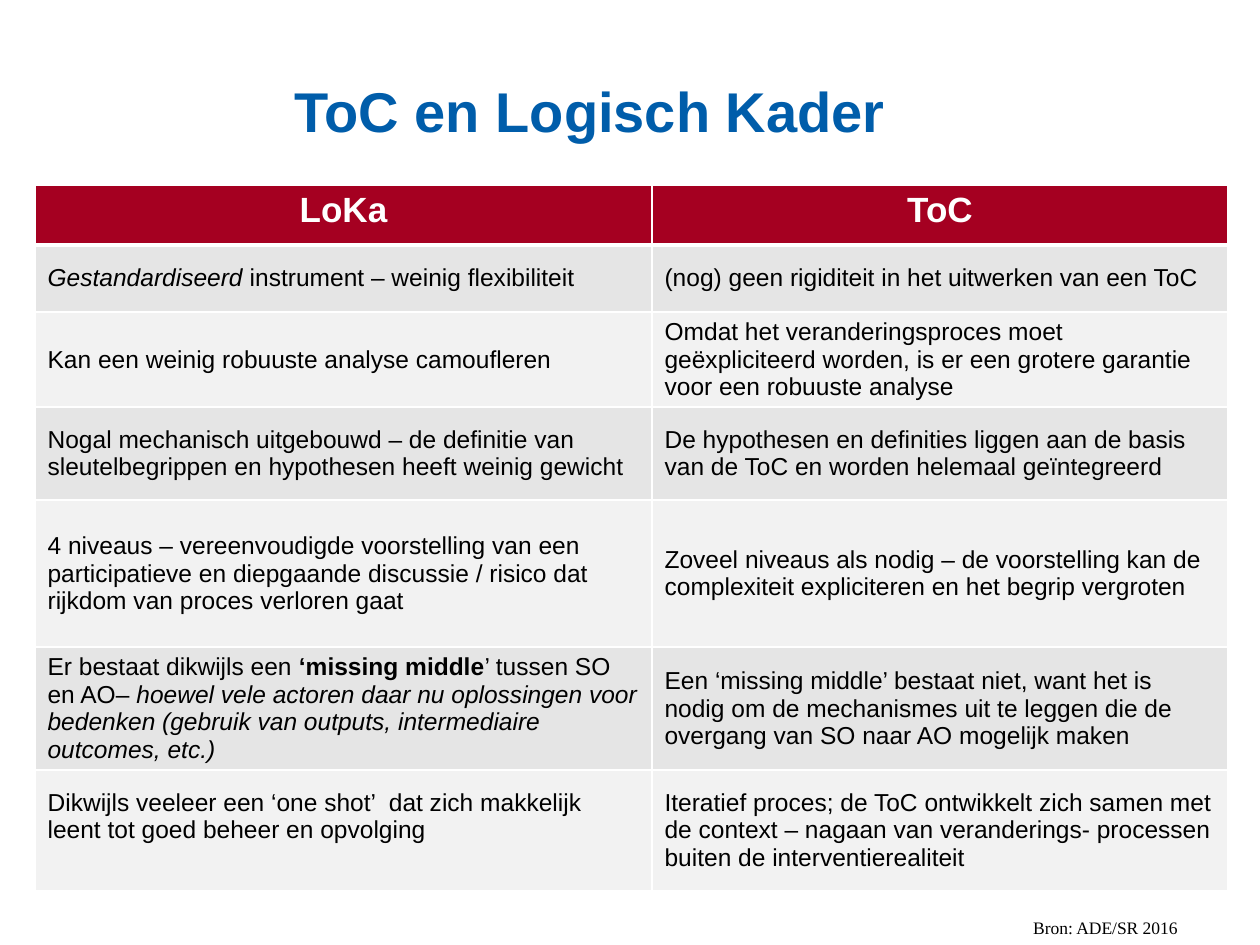
from lxml import etree
from pptx import Presentation, util as u
from pptx.dml.color import RGBColor
from pptx.enum import text as t
from pptx.oxml.ns import qn

TITLE = "ToC en Logisch Kader"
SOURCE = "Bron: ADE/SR 2016"
HEADER = ("LoKa", "ToC")
# Each cell is a list of (text, style) runs: "" plain, "b" bold, "i" italic.
COMPARISON = [
    ([("Gestandardiseerd", "i"), (" instrument – weinig flexibiliteit", "")],
     [("(nog) geen rigiditeit in het uitwerken van een ToC", "")]),
    ([("Kan een weinig robuuste analyse camoufleren", "")],
     [("Omdat het veranderingsproces moet geëxpliciteerd worden, is er een "
       "grotere garantie voor een robuuste analyse", "")]),
    ([("Nogal mechanisch uitgebouwd – de definitie van sleutelbegrippen en "
       "hypothesen heeft weinig gewicht", "")],
     [("De hypothesen en definities liggen aan de basis van de ToC en worden "
       "helemaal geïntegreerd", "")]),
    ([("4 niveaus – vereenvoudigde voorstelling van een participatieve en "
       "diepgaande discussie / risico dat rijkdom van proces verloren gaat", "")],
     [("Zoveel niveaus als nodig – de voorstelling kan de complexiteit "
       "expliciteren en het begrip vergroten", "")]),
    ([("Er bestaat dikwijls een ", ""), ("‘missing middle", "b"),
      ("’ tussen SO en AO– ", ""),
      ("hoewel vele actoren daar nu oplossingen voor bedenken (gebruik van "
       "outputs, intermediaire outcomes, etc.)", "i")],
     [("Een ‘missing middle’ bestaat niet, want het is nodig om de mechanismes "
       "uit te leggen die de overgang van SO naar AO mogelijk maken", "")]),
    ([("Dikwijls veeleer een ‘one shot’  dat zich makkelijk leent tot goed "
       "beheer en opvolging", "")],
     [("Iteratief proces; de ToC ontwikkelt zich samen met de context – nagaan "
       "van veranderings- processen buiten de interventierealiteit", "")]),
]

THEME = {
    "title": ("Arial", 32, "005DAA"),
    "header": ("Arial", 20, "FFFFFF"),
    "body": ("Arial", 14, "000000"),
    "source": ("Times New Roman", 10, "000000"),
    "header_fill": "A50021",
    "bands": ("E5E5E5", "F2F2F2"),
    "rule": "FFFFFF",
}
TITLE_BOX = (282, 55, 945, 95)
TABLE_BOX = (35, 185, 1193, 676)
SOURCE_BOX = (954, 911, 236, 34)
COLUMN_WIDTHS = (617, 576)
ROW_HEIGHTS = (60, 67, 67, 93, 147, 121, 121)
LAST_ROW_LIFT = 34


def px(length):
    return u.Emu(round(length * u.Inches(1) / 126))


def box(lengths):
    return [px(length) for length in lengths]


def add_run(paragraph, words, role, style=""):
    run = paragraph.add_run()
    run.text = words
    name, size, colour = THEME[role]
    run.font.name = name
    run.font.size = u.Pt(size)
    run.font.color.rgb = RGBColor.from_string(colour)
    run.font.bold = "b" in style
    run.font.italic = "i" in style


def set_borders(cell, top, bottom):
    properties = cell._tc.get_or_add_tcPr()
    sides = {"lnL": 1, "lnR": 1, "lnT": top, "lnB": bottom}
    for position, (side, points) in enumerate(sides.items()):
        line = etree.Element(qn("a:" + side), w=str(u.Pt(points)))
        fill = etree.SubElement(line, qn("a:solidFill"))
        etree.SubElement(fill, qn("a:srgbClr"), val=THEME["rule"])
        properties.insert(position, line)


def format_cell(cell, fill, top=1, bottom=1):
    cell.fill.solid()
    cell.fill.fore_color.rgb = RGBColor.from_string(fill)
    set_borders(cell, top, bottom)


def add_title(slide):
    title = slide.shapes.title
    title.left, title.top, title.width, title.height = box(TITLE_BOX)
    frame = title.text_frame
    frame.auto_size = t.MSO_AUTO_SIZE.NONE
    frame.vertical_anchor = t.MSO_ANCHOR.BOTTOM
    frame.paragraphs[0].alignment = t.PP_ALIGN.LEFT
    add_run(frame.paragraphs[0], TITLE, "title", "b")


def add_comparison(slide):
    table = slide.shapes.add_table(
        len(ROW_HEIGHTS), len(COLUMN_WIDTHS), *box(TABLE_BOX)).table
    for column, width in zip(table.columns, COLUMN_WIDTHS):
        column.width = px(width)
    for row, height in zip(table.rows, ROW_HEIGHTS):
        row.height = px(height)

    for column, heading in enumerate(HEADER):
        cell = table.cell(0, column)
        format_cell(cell, THEME["header_fill"], bottom=3)
        paragraph = cell.text_frame.paragraphs[0]
        paragraph.alignment = t.PP_ALIGN.CENTER
        add_run(paragraph, heading, "header", "b")

    for row, statements in enumerate(COMPARISON, start=1):
        for column, runs in enumerate(statements):
            cell = table.cell(row, column)
            format_cell(cell, THEME["bands"][(row - 1) % 2],
                        top=3 if row == 1 else 1)
            cell.vertical_anchor = t.MSO_ANCHOR.MIDDLE
            for words, style in runs:
                add_run(cell.text_frame.paragraphs[0], words, "body", style)
    table.cell(len(COMPARISON), 0).margin_bottom = px(LAST_ROW_LIFT)


def add_source(slide):
    frame = slide.shapes.add_textbox(*box(SOURCE_BOX)).text_frame
    frame.word_wrap = False
    frame.auto_size = t.MSO_AUTO_SIZE.SHAPE_TO_FIT_TEXT
    frame.paragraphs[0].alignment = t.PP_ALIGN.RIGHT
    add_run(frame.paragraphs[0], SOURCE, "source")


def main():
    deck = Presentation()
    deck.slide_width, deck.slide_height = px(1260), px(945)
    slide = deck.slides.add_slide(deck.slide_layouts[5])
    add_title(slide)
    add_comparison(slide)
    add_source(slide)
    deck.save("out.pptx")


if __name__ == "__main__":
    main()
